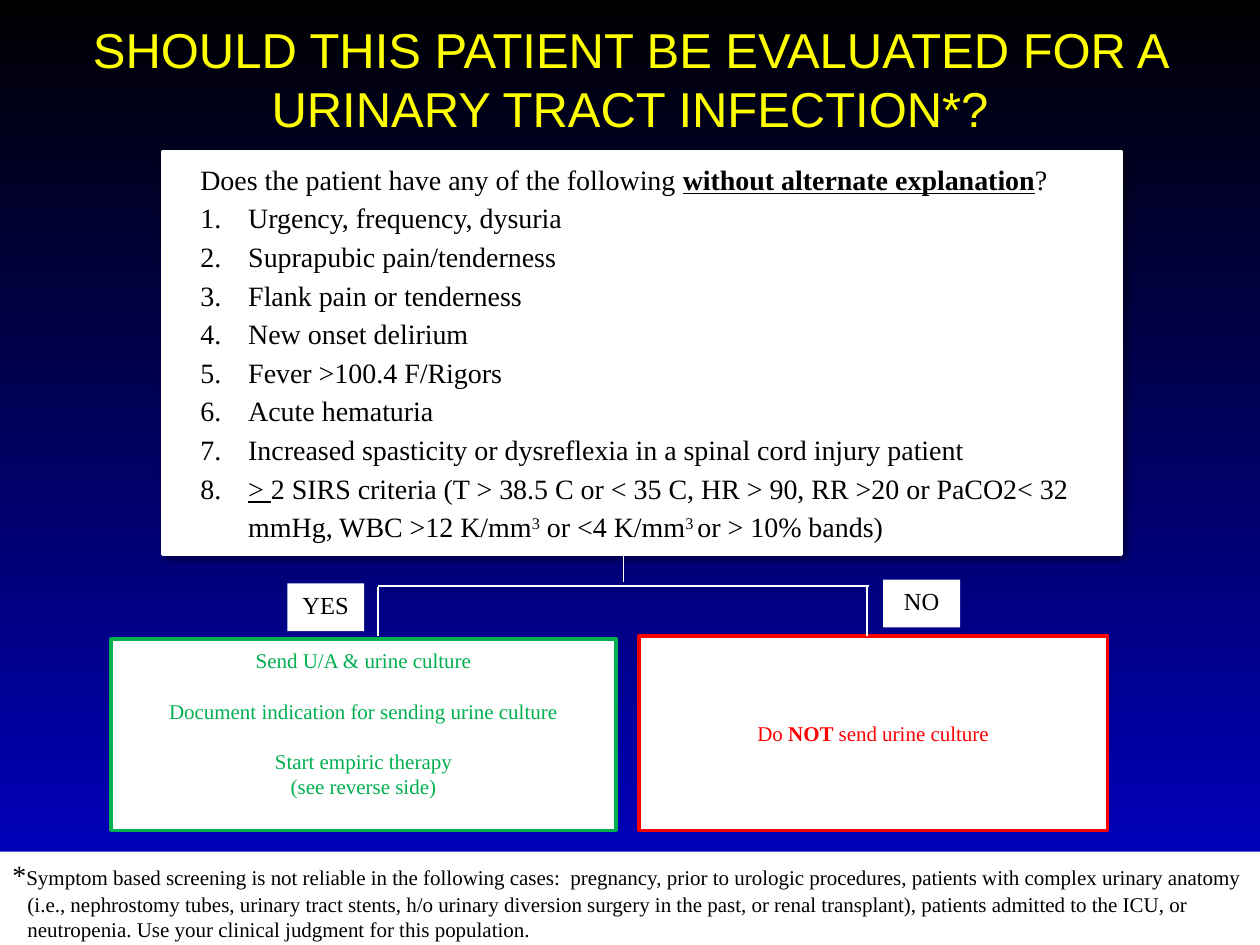
"""Build a decision slide on evaluating a patient for a urinary tract infection."""
from lxml.etree import SubElement
from pptx import Presentation
from pptx.dml.color import RGBColor
from pptx.enum.shapes import MSO_CONNECTOR as Line, MSO_SHAPE as Preset
from pptx.enum.text import MSO_ANCHOR as Anchor, PP_ALIGN as Align
from pptx.oxml.ns import qn
from pptx.util import Inches, Pt

WHITE, BLACK, GREEN, RED, YELLOW = "FFFFFF", "000000", "00B050", "FF0000", "FFFF00"
SERIF = "Times New Roman"
SYMPTOMS = [
    "Urgency, frequency, dysuria",
    "Suprapubic pain/tenderness",
    "Flank pain or tenderness",
    "New onset delirium",
    "Fever >100.4 F/Rigors",
    "Acute hematuria",
    "Increased spasticity or dysreflexia in a spinal cord injury patient",
]
SIRS_CRITERIA = [
    ("> ", {"underline": True}),
    "2 SIRS criteria (T > 38.5 C or < 35 C, HR > 90, RR >20 or PaCO2< 32 mmHg, WBC >12 K/mm",
    ("3", {"baseline": 30}),
    " or <4 K/mm",
    ("3 ", {"baseline": 30}),
    "or > 10% bands)",
]
EXCEPTIONS = [
    [("*", {"size": 16}),
     "Symptom based screening is not reliable in the following cases:  pregnancy, prior to "
     "urologic procedures, patients with complex urinary anatomy"],
    "(i.e., nephrostomy tubes, urinary tract stents, h/o urinary diversion surgery in the past, "
    "or renal transplant), patients admitted to the ICU, or",
    "neutropenia. Use your clinical judgment for this population.",
]
BRANCHES = [
    ((4.95, 4.21), (4.95, 4.62)),
    ((4.95, 4.65), (6.9, 4.65)),
    ((3, 4.66), (3, 5.05)),
    ((6.88, 4.66), (6.88, 5.05)),
    ((4.95, 4.65), (3, 4.65)),
]


def rgb(code):
    """Turn a hex string into a colour."""
    return RGBColor.from_string(code)


def add_run(paragraph, words, size, color, font, bold=False, underline=False, baseline=0):
    """Append one formatted run to a paragraph."""
    run = paragraph.add_run()
    run.text = words
    run.font.size = Pt(size)
    run.font.name = font
    run.font.bold = bold
    run.font.underline = underline
    run.font.color.rgb = rgb(color)
    if baseline:
        run.font._element.set("baseline", str(baseline * 1000))


def write(holder, paragraphs, size=12, color=BLACK, font=SERIF, align=Align.LEFT,
          anchor=Anchor.TOP, insets=(0.1, 0.05, 0.1, 0.05)):
    """Fill a shape with paragraphs, each a string or a list of runs."""
    frame = holder.text_frame
    frame.word_wrap = True
    frame.vertical_anchor = anchor
    (frame.margin_left, frame.margin_top,
     frame.margin_right, frame.margin_bottom) = map(Inches, insets)
    for index, runs in enumerate(paragraphs):
        paragraph = frame.paragraphs[0] if index == 0 else frame.add_paragraph()
        paragraph.alignment = align
        for run in [runs] if isinstance(runs, str) else runs:
            words, changes = (run, {}) if isinstance(run, str) else run
            add_run(paragraph, words, **{"size": size, "color": color, "font": font, **changes})
    return frame.paragraphs


def indent(paragraph, left, first=0):
    """Set the left and first-line indents of a paragraph."""
    properties = paragraph._p.get_or_add_pPr()
    properties.set("marL", str(Inches(left)))
    properties.set("indent", str(Inches(first)))
    return properties


def number(paragraph):
    """Make a paragraph an item of a numbered list."""
    paragraph.line_spacing = 1.15
    properties = indent(paragraph, 0.38, -0.38)
    SubElement(properties, qn("a:buFont"), typeface="+mj-lt")
    SubElement(properties, qn("a:buAutoNum"), type="arabicPeriod")


def add_panel(slide, left, top, width, height, border=None, weight=2):
    """Add a white rectangle with an optional border."""
    panel = slide.shapes.add_shape(Preset.RECTANGLE, *map(Inches, (left, top, width, height)))
    panel.shadow.inherit = False
    panel.fill.solid()
    panel.fill.fore_color.rgb = rgb(WHITE)
    if border:
        panel.line.color.rgb = rgb(border)
        panel.line.width = Pt(weight)
    else:
        panel.line.fill.background()
    return panel


def cast_shadow(panel):
    """Give a panel a soft shadow to the lower right."""
    effects = panel._element.spPr.find(qn("a:effectLst"))
    shadow = SubElement(effects, qn("a:outerShdw"), blurRad=str(Pt(4)), dist=str(Pt(3)),
                        dir=str(45 * 60000), algn="tl", rotWithShape="0")
    shade = SubElement(shadow, qn("a:srgbClr"), val=BLACK)
    SubElement(shade, qn("a:alpha"), val="40000")


def add_branch(slide, start, end):
    """Add a thin white line of the decision tree."""
    branch = slide.shapes.add_connector(Line.STRAIGHT, *map(Inches, (*start, *end)))
    branch.line.color.rgb = rgb(WHITE)
    branch.line.width = Pt(0.75)
    SubElement(branch._element.spPr, qn("a:effectLst"))


def paint_background(slide):
    """Fill the slide from black at the top to blue at the bottom."""
    fill = slide.background.fill
    fill.gradient()
    fill.gradient_angle = 270
    for stop, position, color in zip(fill.gradient_stops, (0, 1), (BLACK, "0000CC")):
        stop.position = position
        stop.color.rgb = rgb(color)


def add_question(slide):
    """Add the card with the question and its numbered symptoms."""
    card = add_panel(slide, 1.29, 1.2, 7.61, 3.2, WHITE, 1.5)
    cast_shadow(card)
    question = ["Does the patient have any of the following ",
                ("without alternate explanation", {"bold": True, "underline": True}), "?"]
    _, *items = write(card, [question, *SYMPTOMS, SIRS_CRITERIA], size=16,
                      anchor=Anchor.MIDDLE, insets=(0.3,) * 4)
    for item in items:
        number(item)


def add_outcomes(slide):
    """Add the two outcomes and the answers that lead to them."""
    refusal = add_panel(slide, 5.07, 5.05, 3.72, 1.54, RED)
    write(refusal, [["Do ", ("NOT ", {"bold": True}), "send urine culture"]], color=RED,
          align=Align.CENTER, anchor=Anchor.MIDDLE, insets=(0.3,) * 4)
    action = add_panel(slide, 0.88, 5.07, 4.01, 1.52, GREEN)
    steps = write(action, ["Send U/A & urine culture",
                           "Document indication for sending urine culture",
                           "Start empiric therapy", "(see reverse side)"],
                  color=GREEN, align=Align.CENTER, insets=(0.3, 0.07, 0.3, 0.07))
    for step in steps[1:3]:
        step.space_before = Pt(14.4)
    for answer, left, top in (("YES", 2.28, 4.63), ("NO", 7.01, 4.6)):
        write(add_panel(slide, left, top, 0.61, 0.38), [answer], size=14, align=Align.CENTER)


def main():
    """Build and save the slide."""
    deck = Presentation()
    deck.slide_width, deck.slide_height = Inches(10), Inches(7.5)
    slide = deck.slides.add_slide(deck.slide_layouts[6])
    paint_background(slide)
    add_question(slide)
    add_outcomes(slide)
    for start, end in BRANCHES:
        add_branch(slide, start, end)
    footnote = add_panel(slide, 0, 6.76, 10, 0.74)
    for line in write(footnote, EXCEPTIONS, insets=(0.1, 0.05, 0.05, 0.05))[1:]:
        indent(line, 0.12)
    title = slide.shapes.add_textbox(0, 0, Inches(10), Inches(1.25))
    write(title, ["SHOULD THIS PATIENT BE EVALUATED FOR A URINARY TRACT INFECTION*?"],
          size=28, color=YELLOW, font="Arial", align=Align.CENTER, anchor=Anchor.MIDDLE)
    deck.save("out.pptx")


if __name__ == "__main__":
    main()
